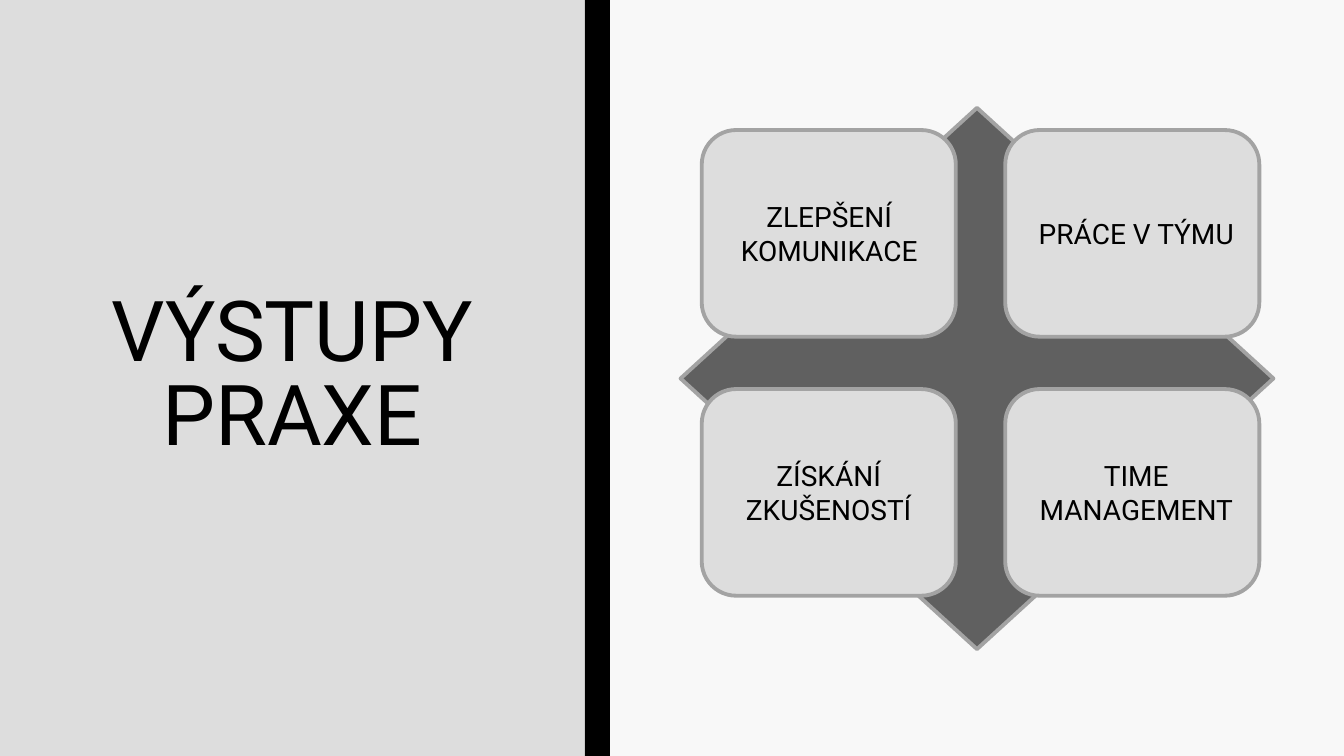
from pptx import Presentation
from pptx.dml.color import RGBColor
from pptx.enum.shapes import MSO_SHAPE
from pptx.enum.text import MSO_ANCHOR, MSO_AUTO_SIZE, PP_ALIGN
from pptx.util import Inches, Pt

COLORS = {
    "background": "F8F8F8",
    "panel": "DDDDDD",
    "black": "000000",
    "diamond": "606060",
    "outline": "A3A3A3",
}


def add_block(kind, left, top, width, height, fill, outline=None):
    block = slide.shapes.add_shape(
        kind, Inches(left), Inches(top), Inches(width), Inches(height)
    )
    block.shadow.inherit = False
    block.fill.solid()
    block.fill.fore_color.rgb = RGBColor.from_string(COLORS[fill])
    if outline:
        block.line.color.rgb = RGBColor.from_string(COLORS[outline])
        block.line.width = Pt(2.75)
    else:
        block.line.fill.background()


def write_centered(frame, text, size):
    frame.word_wrap = True
    frame.text = text
    paragraph = frame.paragraphs[0]
    paragraph.alignment = PP_ALIGN.CENTER
    font = paragraph.runs[0].font
    font.name = "Roboto"
    font.size = Pt(size)
    font.color.rgb = RGBColor.from_string(COLORS["black"])


presentation = Presentation()
presentation.slide_width = Inches(13.33)
presentation.slide_height = Inches(7.5)
slide = presentation.slides.add_slide(presentation.slide_layouts[5])
slide.background.fill.solid()
slide.background.fill.fore_color.rgb = RGBColor.from_string(COLORS["background"])

add_block(MSO_SHAPE.RECTANGLE, 0, 0, 5.8, 7.5, "panel")
add_block(MSO_SHAPE.RECTANGLE, 5.8, 0, 0.25, 7.5, "black")

title = slide.shapes.title
slide.shapes._spTree.append(title._element)
title.left, title.top = Inches(0.79), Inches(0)
title.width, title.height = Inches(4.22), Inches(7.5)
write_centered(title.text_frame, "VÝSTUPY PRAXE", 60)
title.text_frame.auto_size = MSO_AUTO_SIZE.NONE
title.text_frame.vertical_anchor = MSO_ANCHOR.MIDDLE
title.text_frame.paragraphs[0].line_spacing = 0.84

add_block(MSO_SHAPE.DIAMOND, 6.75, 1.07, 5.88, 5.37, "diamond", "outline")

for card_top in (1.29, 3.86):
    for card_left in (6.96, 9.97):
        add_block(MSO_SHAPE.ROUNDED_RECTANGLE, card_left, card_top, 2.52, 2.05,
                  "panel", "outline")

outcomes = [
    ("ZLEPŠENÍ KOMUNIKACE", 7.14, 1.93, 2.17, 0.77),
    ("PRÁCE V TÝMU", 10.17, 2.1, 2.2, 0.44),
    ("ZÍSKÁNÍ ZKUŠENOSTÍ", 7.17, 4.5, 2.1, 0.77),
    ("TIME MANAGEMENT", 10.17, 4.5, 2.2, 0.77),
]
for outcome, left, top, width, height in outcomes:
    label = slide.shapes.add_textbox(
        Inches(left), Inches(top), Inches(width), Inches(height)
    )
    write_centered(label.text_frame, outcome, 20)
    label.text_frame.auto_size = MSO_AUTO_SIZE.SHAPE_TO_FIT_TEXT

presentation.save("out.pptx")
